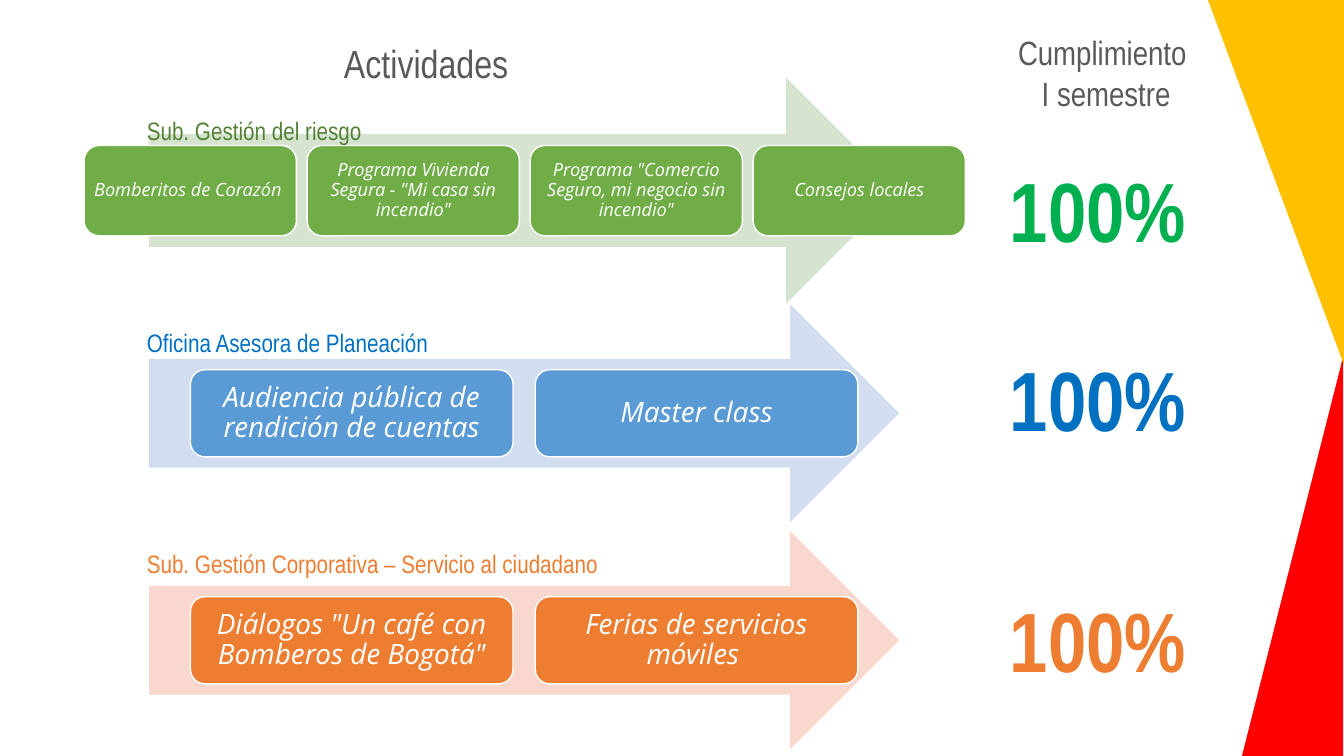
from dataclasses import dataclass

from pptx import Presentation
from pptx.dml.color import RGBColor
from pptx.enum.shapes import MSO_SHAPE as Shape
from pptx.enum.text import MSO_ANCHOR as Anchor, MSO_AUTO_SIZE as AutoSize, PP_ALIGN as Align
from pptx.util import Cm, Pt


def color(value):
    return RGBColor.from_string(value)


@dataclass
class Row:
    label: str
    label_top: float
    label_width: float
    label_color: str
    arrow_top: float
    arrow_height: float
    arrow_color: str
    cards: list
    cards_left: float
    card_width: float
    card_gap: float
    card_color: str
    card_size: int
    card_inset: float
    score_top: float
    score_color: str


class Slide:
    heading_font = "Arial Narrow"
    card_font = "Open Sans"
    white = "FFFFFF"

    def __init__(self, page):
        self.page = page

    def fill_text(self, frame, text, ink, align=Align.LEFT, spacing=1.0, **font):
        frame.word_wrap = True
        for index, line in enumerate(text.split("\n")):
            para = frame.add_paragraph() if index else frame.paragraphs[0]
            para.alignment = align
            para.line_spacing = spacing
            span = para.add_run()
            span.text = line
            span.font.color.rgb = color(ink)
            for name, value in font.items():
                setattr(span.font, name, value)

    def title(self, text, left, top, width, height, ink, size):
        box = self.page.shapes.title
        place = dict(left=left, top=top, width=width, height=height)
        for name, value in place.items():
            setattr(box, name, Cm(value))
        box.text_frame.auto_size = AutoSize.NONE
        box.text_frame.vertical_anchor = Anchor.TOP
        self.fill_text(box.text_frame, text, ink, Align.CENTER,
                       name=self.heading_font, size=Pt(size))

    def text(self, text, left, top, width, height, ink, size, align=Align.LEFT, bold=False):
        box = self.page.shapes.add_textbox(Cm(left), Cm(top), Cm(width), Cm(height))
        self.fill_text(box.text_frame, text, ink, align,
                       name=self.heading_font, size=Pt(size), bold=bold)

    def shape(self, kind, left, top, width, height, fill):
        shape = self.page.shapes.add_shape(kind, Cm(left), Cm(top), Cm(width), Cm(height))
        shape.shadow.inherit = False
        shape.fill.solid()
        shape.fill.fore_color.rgb = color(fill)
        shape.line.fill.background()
        return shape

    def card(self, text, left, top, width, height, fill, size, inset):
        card = self.shape(Shape.ROUNDED_RECTANGLE, left, top, width, height, fill)
        card.line.color.rgb = color(self.white)
        card.line.width = Pt(1)
        frame = card.text_frame
        frame.vertical_anchor = Anchor.MIDDLE
        for side in ("left", "top", "right", "bottom"):
            setattr(frame, f"margin_{side}", Cm(inset))
        self.fill_text(frame, text, self.white, Align.CENTER, 0.9,
                       name=self.card_font, size=Pt(size), italic=True)

    def row(self, row):
        self.shape(Shape.RIGHT_ARROW, 3.76, row.arrow_top, 18.9, row.arrow_height, row.arrow_color)
        card_top = row.arrow_top + 0.3 * row.arrow_height
        for index, text in enumerate(row.cards):
            left = row.cards_left + index * (row.card_width + row.card_gap)
            self.card(text, left, card_top, row.card_width, 0.4 * row.arrow_height,
                      row.card_color, row.card_size, row.card_inset)
        self.text(row.label, 3.45, row.label_top, row.label_width, 1.02, row.label_color, 18)
        self.text("100%", 25.2, row.score_top, 5.33, 2.82, row.score_color, 60, bold=True)


WIDE = dict(arrow_height=5.49, cards_left=4.8, card_width=8.13, card_gap=0.56,
            card_size=20, card_inset=0.2)
ROWS = [
    Row(label="Sub. Gestión del riesgo", label_top=2.79, label_width=6.71, label_color="538135",
        arrow_top=1.96, arrow_height=5.69, arrow_color="D5E3CF",
        cards=["Bomberitos de Corazón ",
               'Programa Vivienda Segura - "Mi casa sin incendio"',
               'Programa "Comercio Seguro, mi negocio sin incendio"',
               "Consejos locales"],
        cards_left=2.12, card_width=5.35, card_gap=0.27, card_color="70AD47",
        card_size=13, card_inset=0.13, score_top=3.86, score_color="00B050"),
    Row(label="Oficina Asesora de Planeación", label_top=8.13, label_width=9.73,
        label_color="0070C0", arrow_top=7.67, arrow_color="D2DEEF",
        cards=["Audiencia pública de rendición de cuentas", "Master class"],
        card_color="5B9BD5", score_top=8.64, score_color="0070C0", **WIDE),
    Row(label="Sub. Gestión Corporativa – Servicio al ciudadano", label_top=13.69,
        label_width=14.25, label_color="ED7D31", arrow_top=13.39, arrow_color="F8D7CE",
        cards=['Diálogos "Un café con Bomberos de Bogotá"', "Ferias de servicios móviles "],
        card_color="ED7D31", score_top=14.71, score_color="ED7D31", **WIDE),
]


def main():
    deck = Presentation()
    deck.slide_width, deck.slide_height = Cm(33.87), Cm(19.05)
    slide = Slide(deck.slides.add_slide(deck.slide_layouts[5]))
    red = slide.shape(Shape.RIGHT_TRIANGLE, 30.4, 8.99, 3.45, 13.61, "FF0000")
    red._element.spPr.xfrm.set("flipH", "1")
    yellow = slide.shape(Shape.RIGHT_TRIANGLE, 30.43, -0.03, 3.45, 9.25, "FFC000")
    yellow.rotation = 180
    for row in ROWS:
        slide.row(row)
    slide.text("Cumplimiento \nI semestre", 23.01, 0.69, 9.73, 2.31, "595959", 24, Align.CENTER)
    slide.title("Actividades ", 2.01, 0.86, 17.68, 1.45, "595959", 28)
    deck.save("out.pptx")


if __name__ == "__main__":
    main()
